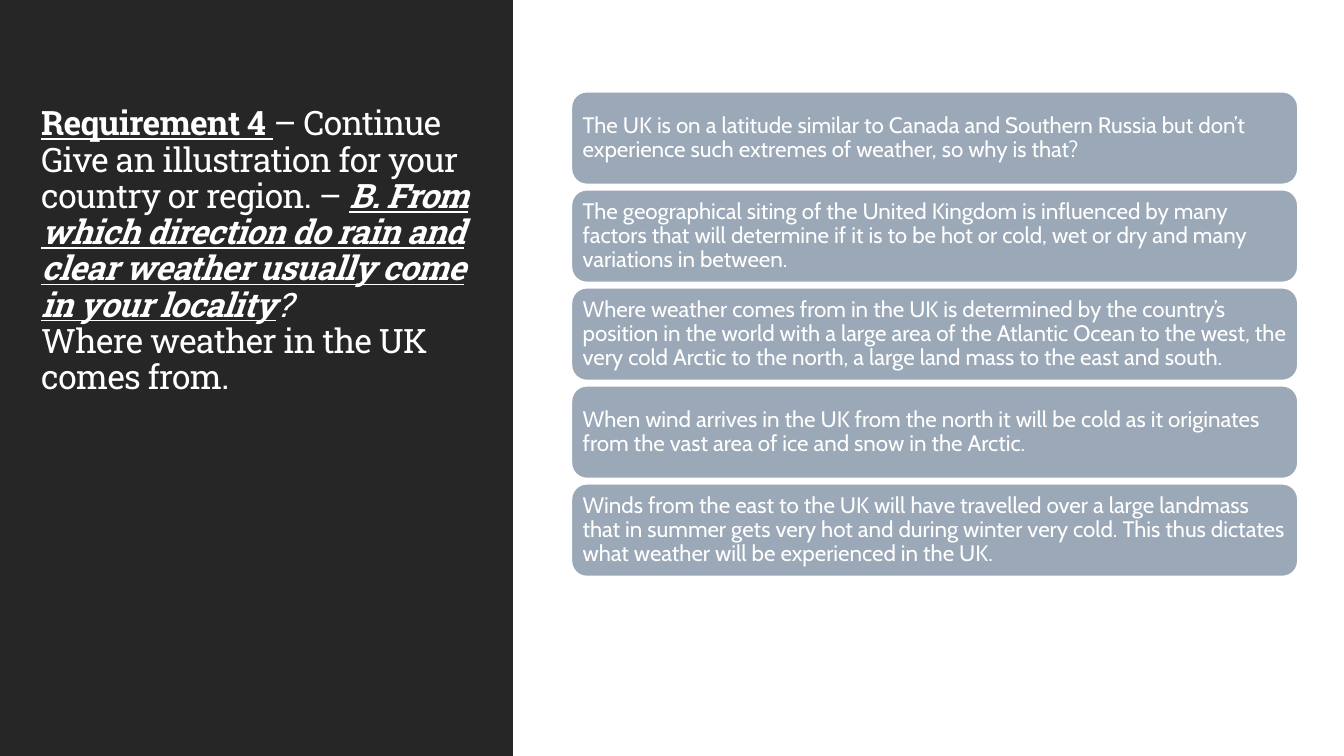
"""Build a slide on where UK weather comes from, with a dark title panel and five cards."""
from dataclasses import dataclass

from pptx import Presentation
from pptx.dml.color import RGBColor
from pptx.enum import shapes, text
from pptx.util import Cm, Pt


@dataclass(frozen=True)
class Theme:
    dark: RGBColor = RGBColor(0x26, 0x26, 0x26)
    card: RGBColor = RGBColor(0x9B, 0xA8, 0xB7)
    white: RGBColor = RGBColor(0xFF, 0xFF, 0xFF)
    head: str = "Roboto Slab"
    body: str = "Cabin"
    large: Pt = Pt(24)
    small: Pt = Pt(16)


theme = Theme()


def style(para, name, size):
    para.alignment = text.PP_ALIGN.LEFT
    para.line_spacing = 0.9
    para.font.name = name
    para.font.size = size
    para.font.color.rgb = theme.white


def block(kind, left, top, width, height, fill):
    shape = slide.shapes.add_shape(kind, Cm(left), Cm(top), Cm(width), Cm(height))
    shape.shadow.inherit = False
    shape.fill.solid()
    shape.fill.fore_color.rgb = fill
    shape.line.fill.background()
    return shape


deck = Presentation()
deck.slide_width, deck.slide_height = Cm(33.87), Cm(19.05)
slide = deck.slides.add_slide(deck.slide_layouts[6])

block(shapes.MSO_SHAPE.RECTANGLE, 0, 0, 12.93, 19.05, theme.dark)

title = slide.shapes.add_textbox(Cm(0.79), Cm(2.18), Cm(12.01), Cm(7.95))
frame = title.text_frame
frame.word_wrap = True
frame.vertical_anchor = text.MSO_ANCHOR.BOTTOM
para = frame.paragraphs[0]
style(para, theme.head, theme.large)

parts = [
    ("Requirement 4 ", True, False, False),
    ("– Continue", False, False, True),
    ("Give an illustration for your country or region. – ", False, False, False),
    ("B. From which direction do rain and clear weather usually come in your locality",
     True, True, False),
    ("?", False, True, True),
    ("Where weather in the UK comes from.", False, False, False),
]
for words, strong, slant, ends in parts:
    run = para.add_run()
    run.text = words
    run.font.bold = run.font.underline = strong
    run.font.italic = slant
    run._r.get_or_add_rPr().set("spc", "-50")
    if ends:
        para.add_line_break()

facts = [
    "The UK is on a latitude similar to Canada and Southern Russia but don’t "
    "experience such extremes of weather, so why is that?",
    "The geographical siting of the United Kingdom is influenced by many factors "
    "that will determine if it is to be hot or cold, wet or dry and many "
    "variations in between.",
    "Where weather comes from in the UK is determined by the country’s position in "
    "the world with a large area of the Atlantic Ocean to the west, the very cold "
    "Arctic to the north, a large land mass to the east and south.",
    "When wind arrives in the UK from the north it will be cold as it originates "
    "from the vast area of ice and snow in the Arctic.",
    "Winds from the east to the UK will have travelled over a large landmass that "
    "in summer gets very hot and during winter very cold. This thus dictates what "
    "weather will be experienced in the UK.",
]
for row, fact in enumerate(facts):
    card = block(shapes.MSO_SHAPE.ROUNDED_RECTANGLE,
                 14.4, 2.31 + row * 2.47, 18.31, 2.34, theme.card)
    card.line.color.rgb = theme.white
    card.line.width = Pt(1.25)
    frame = card.text_frame
    frame.word_wrap = True
    frame.vertical_anchor = text.MSO_ANCHOR.MIDDLE
    frame.margin_left = frame.margin_right = Cm(0.17)
    frame.margin_top = frame.margin_bottom = Cm(0.17)
    para = frame.paragraphs[0]
    para.text = fact
    style(para, theme.body, theme.small)

deck.save("out.pptx")
